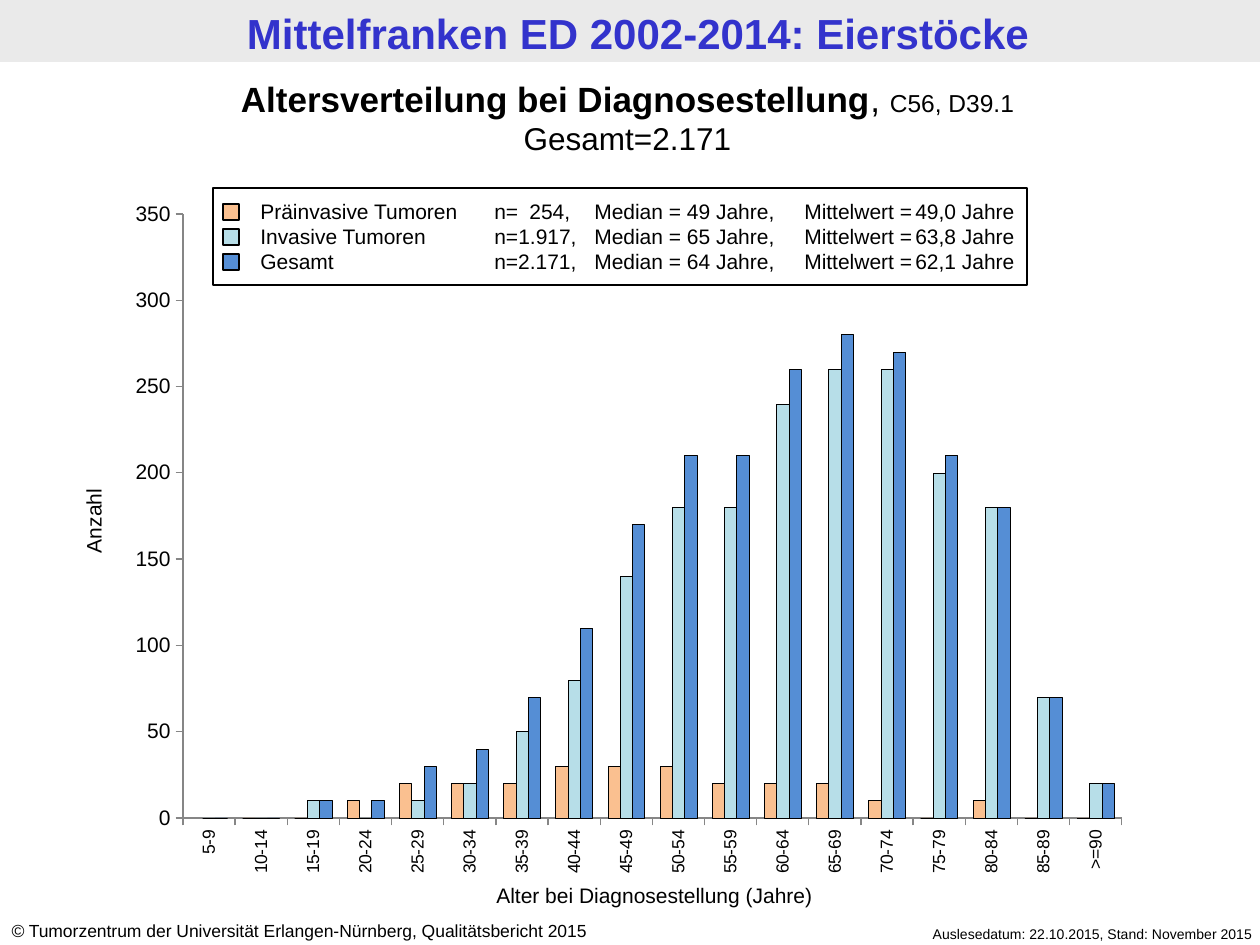
"""Build the age distribution slide for ovarian tumours."""
import pptx
import pptx.chart.data
import pptx.dml.color
import pptx.enum.chart
import pptx.enum.shapes
import pptx.enum.text
import pptx.oxml
import pptx.oxml.ns
import pptx.util

RGBColor = pptx.dml.color.RGBColor
Align = pptx.enum.text.PP_ALIGN
BLACK = RGBColor(0x00, 0x00, 0x00)
WHITE = RGBColor(0xFF, 0xFF, 0xFF)
BAND_GRAY = RGBColor(0xEA, 0xEA, 0xEA)
AXIS_GRAY = RGBColor(0x86, 0x86, 0x86)
TITLE_BLUE = RGBColor(0x33, 0x33, 0xCC)
ORANGE = RGBColor(0xFA, 0xC0, 0x90)
PALE_BLUE = RGBColor(0xB7, 0xDE, 0xE8)
BLUE = RGBColor(0x55, 0x8E, 0xD5)
SERIES_COLORS = (ORANGE, PALE_BLUE, BLUE)

EMU_PER_PX = 914400 / 126
FONT = "Arial"

AGE_GROUPS = [f"{age}-{age + 4}" for age in range(5, 90, 5)] + [">=90"]
PREINVASIVE = [None, 0, 0, 10, 20, 20, 20, 30, 30, 30, 20, 20, 20, 10, 0, 10, 0, 0]
INVASIVE = [0, 0, 10, 0, 10, 20, 50, 80, 140, 180, 180, 240, 260, 260, 200, 180, 70, 20]
TOTAL = [0, 0, 10, 10, 30, 40, 70, 110, 170, 210, 210, 260, 280, 270, 210, 180, 70, 20]

LEGEND_ROWS = (
    "Präinvasive Tumoren\tn=\t254,\tMedian = 49 Jahre,\tMittelwert =\t49,0 Jahre",
    "Invasive Tumoren \t\tn=\t1.917,\tMedian = 65 Jahre,\tMittelwert =\t63,8 Jahre",
    "Gesamt\t\tn=2.171,\tMedian = 64 Jahre,\tMittelwert =\t62,1 Jahre",
)
LEGEND_TABS = ((185, "l"), (234, "l"), (310, "r"), (334, "l"), (544, "l"), (655, "l"))


def px(length):
    """Turn a length in px into EMU."""
    return pptx.util.Emu(round(length * EMU_PER_PX))


def format_font(font, size, color=BLACK, bold=False, italic=False):
    """Set the face, size, colour and style of a font."""
    font.name = FONT
    font.size = pptx.util.Pt(size)
    font.color.rgb = color
    font.bold = bold
    font.italic = italic


def add_rect(page, box, fill=None, line=None):
    """Add a plain rectangle with an optional fill and outline."""
    rect = page.shapes.add_shape(pptx.enum.shapes.MSO_SHAPE.RECTANGLE, *map(px, box))
    rect.shadow.inherit = False
    if fill is None:
        rect.fill.background()
    else:
        rect.fill.solid()
        rect.fill.fore_color.rgb = fill
    if line is None:
        rect.line.fill.background()
    else:
        rect.line.color.rgb = line
        rect.line.width = pptx.util.Pt(0.75)
    return rect


def add_text(page, box, lines, align=Align.LEFT):
    """Add a text box whose lines are lists of (text, size, style) spans."""
    label = page.shapes.add_textbox(*map(px, box))
    frame = label.text_frame
    frame.word_wrap = True
    for index, spans in enumerate(lines):
        para = frame.paragraphs[0] if index == 0 else frame.add_paragraph()
        para.alignment = align
        for text, size, style in spans:
            span = para.add_run()
            span.text = text
            format_font(span.font, size, **style)
    return label


def add_header(page, box):
    """Place the gray band and the slide title over it."""
    left, top, width, height = box
    title = page.shapes.title
    band = add_rect(page, box, BAND_GRAY)
    title.element.addprevious(band.element)
    title.left, title.top = px(left + 8), px(top + 2)
    title.width, title.height = px(width), px(height)
    frame = title.text_frame
    frame.text = "Mittelfranken ED 2002-2014: Eierstöcke"
    frame.auto_size = pptx.enum.text.MSO_AUTO_SIZE.NONE
    frame.paragraphs[0].alignment = Align.CENTER
    format_font(frame.paragraphs[0].runs[0].font, 24, TITLE_BLUE, bold=True)


def add_subtitle(page, box):
    """Place the chart heading and the total count."""
    heading = [
        ("Altersverteilung bei Diagnosestellung", 20, {"bold": True}),
        (", ", 20, {}),
        ("C56, D39.1", 14, {}),
    ]
    add_text(page, box, [heading, [("Gesamt=2.171", 18, {})]], Align.CENTER)


def set_plot_area(chart, box, plot):
    """Fix the inner plot area and paint it white."""
    left, top, width, height = box
    fractions = {
        "x": (plot[0] - left) / width,
        "y": (plot[1] - top) / height,
        "w": plot[2] / width,
        "h": plot[3] / height,
    }
    places = "".join(f'<c:{key} val="{value:.4f}"/>' for key, value in fractions.items())
    names = pptx.oxml.ns.nsdecls("c", "a")
    layout = pptx.oxml.parse_xml(
        f'<c:layout {names}><c:manualLayout><c:layoutTarget val="inner"/>'
        f'<c:xMode val="edge"/><c:yMode val="edge"/>{places}</c:manualLayout></c:layout>'
    )
    area = chart.element.find(".//" + pptx.oxml.ns.qn("c:plotArea"))
    for old in area.findall(pptx.oxml.ns.qn("c:layout")):
        area.remove(old)
    area.insert(0, layout)
    area.append(pptx.oxml.parse_xml(
        f'<c:spPr {names}><a:solidFill><a:srgbClr val="{WHITE}"/></a:solidFill></c:spPr>'
    ))


def add_age_chart(page, box, plot):
    """Place the clustered columns by age group."""
    data = pptx.chart.data.CategoryChartData()
    data.categories = AGE_GROUPS
    for name, values in zip(("Präinvasive Tumoren", "Invasive Tumoren", "Gesamt"),
                            (PREINVASIVE, INVASIVE, TOTAL)):
        data.add_series(name, values)
    kind = pptx.enum.chart.XL_CHART_TYPE.COLUMN_CLUSTERED
    chart = page.shapes.add_chart(kind, *map(px, box), data).chart
    chart.has_legend = False
    chart.has_title = False
    chart.font.name = "Calibri"
    chart.font.size = pptx.util.Pt(18)
    columns = chart.plots[0]
    columns.gap_width = 124
    columns.overlap = 0
    columns.vary_by_categories = False
    for series, color in zip(columns.series, SERIES_COLORS):
        series.format.fill.solid()
        series.format.fill.fore_color.rgb = color
        series.format.line.color.rgb = BLACK
        series.format.line.width = pptx.util.Pt(0.25)
    for axis, size in ((chart.category_axis, 10), (chart.value_axis, 12)):
        axis.has_major_gridlines = False
        axis.major_tick_mark = pptx.enum.chart.XL_TICK_MARK.OUTSIDE
        axis.format.line.color.rgb = AXIS_GRAY
        format_font(axis.tick_labels.font, size)
    chart.value_axis.minimum_scale = 0
    chart.value_axis.maximum_scale = 350
    chart.value_axis.major_unit = 50
    label_body = chart.category_axis._element.find(".//" + pptx.oxml.ns.qn("a:bodyPr"))
    label_body.set("rot", "-5400000")
    label_body.set("vert", "horz")
    set_plot_area(chart, box, plot)


def add_axis_titles(page):
    """Place the titles of both chart axes."""
    add_text(page, (461, 876, 387, 38),
             [[("Alter bei Diagnosestellung (Jahre)", 12, {})]], Align.CENTER)
    count = add_text(page, (-71, 502, 329, 38), [[("Anzahl", 12, {})]], Align.CENTER)
    count.rotation = 270


def add_legend(page, box):
    """Place the framed legend with its colour keys and tabbed figures."""
    left, top, width, height = box
    label = add_text(page, (left + 35, top + 4, width - 5, height - 8),
                     [[(row, 12, {})] for row in LEGEND_ROWS])
    for para in label.text_frame.paragraphs:
        stops = "".join(f'<a:tab pos="{px(place)}" algn="{side}"/>'
                        for place, side in LEGEND_TABS)
        para._p.get_or_add_pPr().append(pptx.oxml.parse_xml(
            f'<a:tabLst {pptx.oxml.ns.nsdecls("a")}>{stops}</a:tabLst>'))
    add_rect(page, box, line=BLACK)
    for index, color in enumerate(SERIES_COLORS):
        add_rect(page, (left + 10, top + 16 + 25 * index, 16, 16), color, BLACK)


def add_footer(page):
    """Place the copyright line and the data status."""
    add_text(page, (838, 919, 427, 30),
             [[("Auslesedatum: 22.10.2015, Stand: November 2015", 8, {})]], Align.RIGHT)
    source = " Tumorzentrum der Universität Erlangen-Nürnberg, Qualitätsbericht 2015"
    add_text(page, (-1, 914, 660, 34), [[("©", 10, {"italic": True}), (source, 10, {})]])


def main():
    """Build and save the deck."""
    deck = pptx.Presentation()
    deck.slide_width, deck.slide_height = px(1260), px(945)
    page = deck.slides.add_slide(deck.slide_layouts[5])
    add_header(page, (0, 0, 1260, 62))
    add_footer(page)
    add_subtitle(page, (-5, 71, 1265, 93))
    add_age_chart(page, (115, 189, 1028, 699), (183, 214, 939, 604))
    add_axis_titles(page)
    add_legend(page, (213, 188, 814, 97))
    deck.save("out.pptx")


if __name__ == "__main__":
    main()
